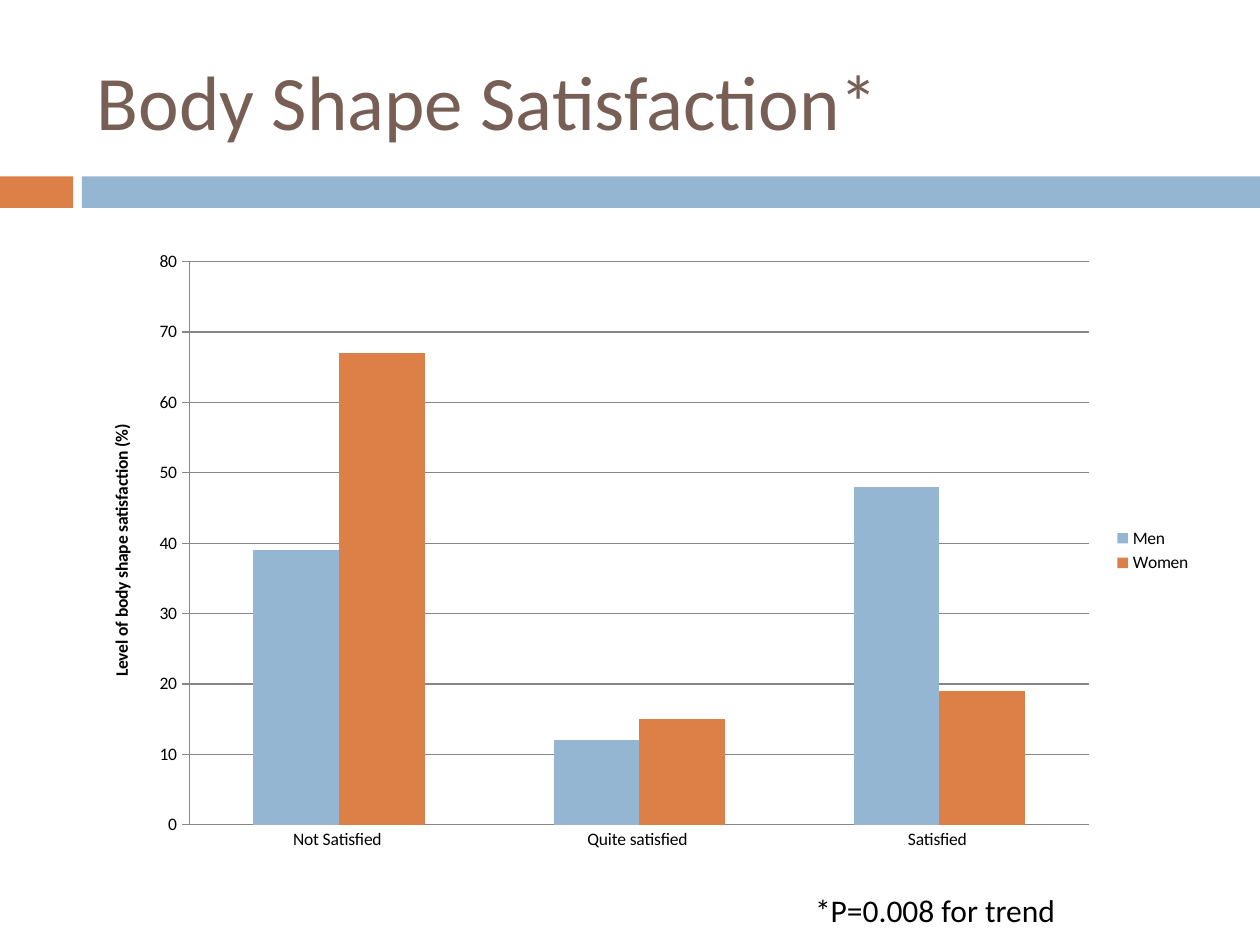
from pptx import Presentation
from pptx.chart.data import CategoryChartData
from pptx.dml.color import RGBColor
from pptx.enum.chart import XL_CHART_TYPE, XL_LEGEND_POSITION, XL_TICK_MARK
from pptx.enum.shapes import MSO_SHAPE
from pptx.enum.text import MSO_ANCHOR
from pptx.util import Inches, Pt

FONT = "Calibri"
BLUE = RGBColor(0x94, 0xB6, 0xD2)
ORANGE = RGBColor(0xDD, 0x80, 0x47)
BROWN = RGBColor(0x77, 0x5F, 0x55)
GRAY = RGBColor(0x86, 0x86, 0x86)
BLACK = RGBColor(0, 0, 0)


def set_font(font, size, color, bold=False):
    font.name = FONT
    font.size = Pt(size)
    font.color.rgb = color
    font.bold = bold


def add_text(s, box, text, size, color, anchor=MSO_ANCHOR.TOP):
    tf = s.shapes.add_textbox(*map(Inches, box)).text_frame
    tf.word_wrap = True
    tf.vertical_anchor = anchor
    r = tf.paragraphs[0].add_run()
    r.text = text
    set_font(r.font, size, color)


def add_band(s, box, accent_width, gap):
    left, top, width, height = box
    start = accent_width + gap
    for x, w, color in ((left, accent_width, ORANGE),
                        (left + start, width - start, BLUE)):
        sp = s.shapes.add_shape(MSO_SHAPE.RECTANGLE, Inches(x), Inches(top),
                                Inches(w), Inches(height))
        sp.shadow.inherit = False
        sp.fill.solid()
        sp.fill.fore_color.rgb = color
        sp.line.fill.background()


def style_line(line):
    line.color.rgb = GRAY
    line.width = Pt(0.75)


def add_satisfaction_chart(s, box):
    data = CategoryChartData()
    data.categories = ["Not Satisfied ", "Quite satisfied ", "Satisfied "]
    data.add_series("Men ", (39, 12, 48))
    data.add_series("Women ", (67, 15, 19))
    chart = s.shapes.add_chart(XL_CHART_TYPE.COLUMN_CLUSTERED,
                               *map(Inches, box), data).chart
    set_font(chart.font, 10, BLACK)
    chart.has_title = False
    chart.has_legend = True
    chart.legend.position = XL_LEGEND_POSITION.RIGHT
    chart.legend.include_in_layout = False

    plot = chart.plots[0]
    plot.gap_width = 150
    plot.overlap = 0
    plot.vary_by_categories = False
    for series, color in zip(plot.series, (BLUE, ORANGE)):
        series.format.fill.solid()
        series.format.fill.fore_color.rgb = color

    cat, val = chart.category_axis, chart.value_axis
    cat.major_tick_mark = XL_TICK_MARK.NONE
    val.major_tick_mark = XL_TICK_MARK.OUTSIDE
    val.minimum_scale, val.maximum_scale, val.major_unit = 0, 80, 10
    val.has_major_gridlines = True
    for line in (cat.format.line, val.format.line,
                 val.major_gridlines.format.line):
        style_line(line)
    r = val.axis_title.text_frame.paragraphs[0].add_run()
    r.text = "Level of body shape satisfaction (%)"
    set_font(r.font, 10, BLACK, bold=True)


def main():
    prs = Presentation()
    prs.slide_width, prs.slide_height = Inches(10), Inches(7.5)
    s = prs.slides.add_slide(prs.slide_layouts[6])
    add_band(s, (0, 1.4, 10, 0.25), 0.58, 0.07)
    add_text(s, (0.67, 0.25, 8.92, 1.08), "Body Shape Satisfaction*", 44,
             BROWN, MSO_ANCHOR.MIDDLE)
    add_satisfaction_chart(s, (0.67, 1.9, 8.92, 4.94))
    add_text(s, (6.37, 7.02, 3.22, 0.4), "*P=0.008 for trend", 18, BLACK)
    prs.save("out.pptx")


if __name__ == "__main__":
    main()
